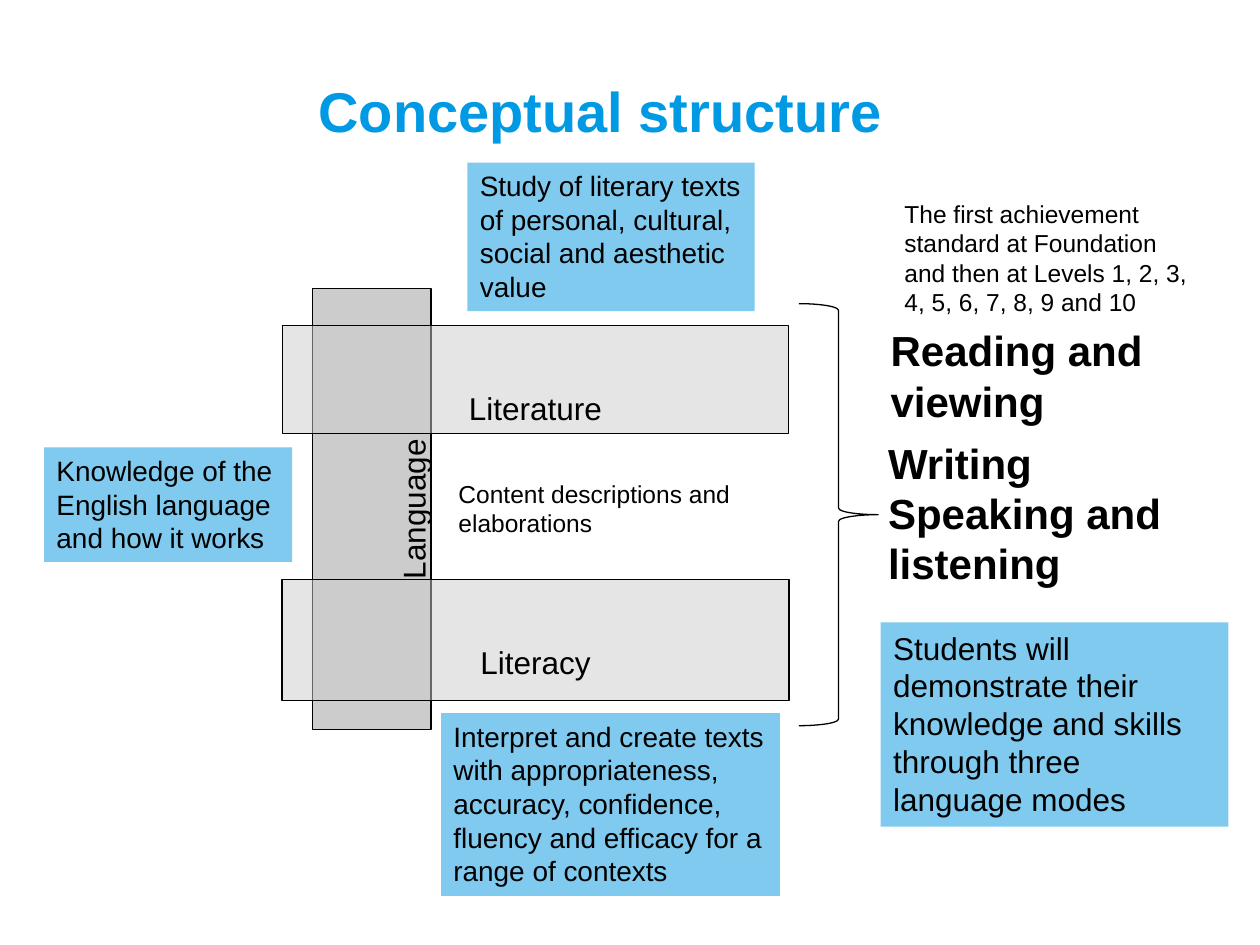
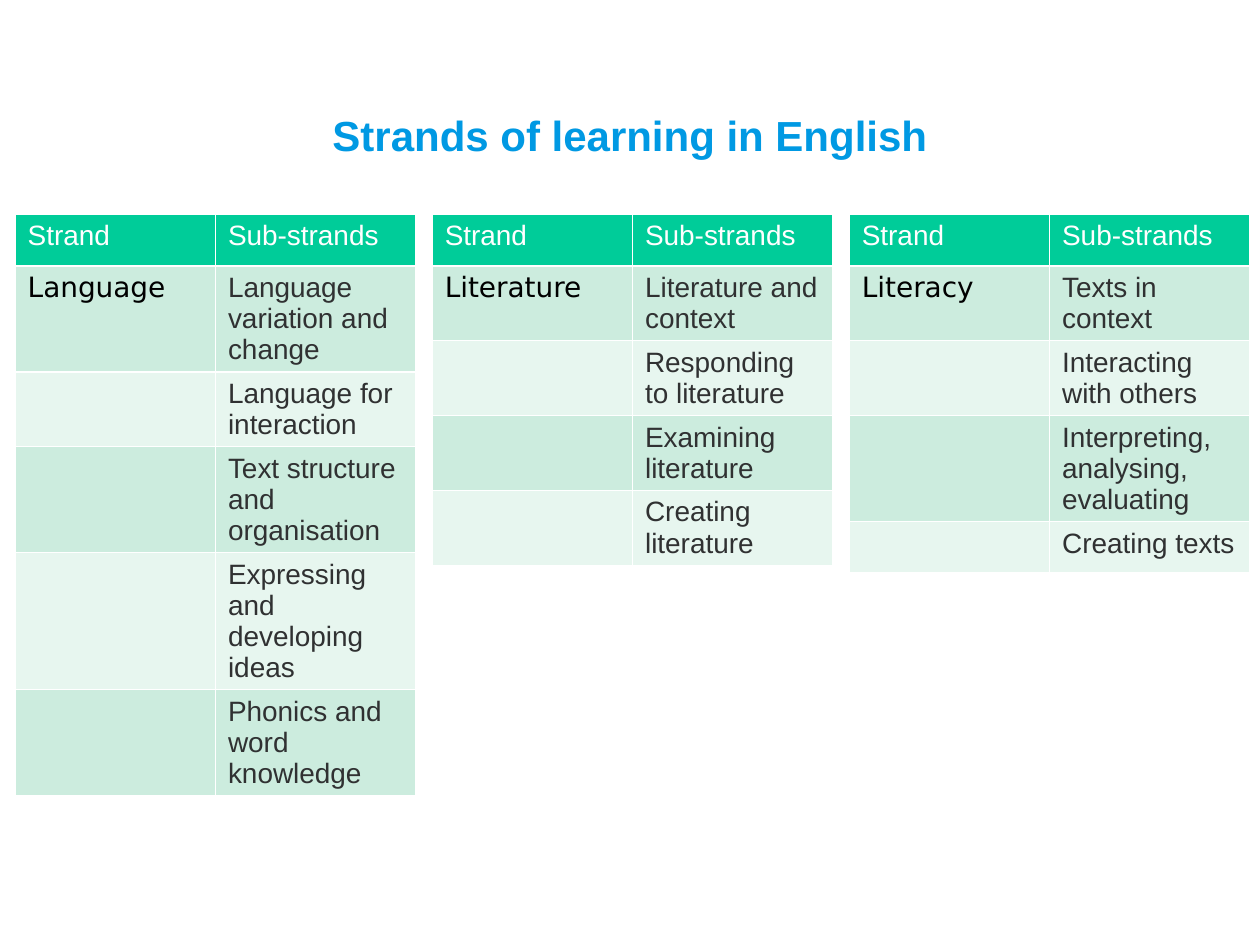
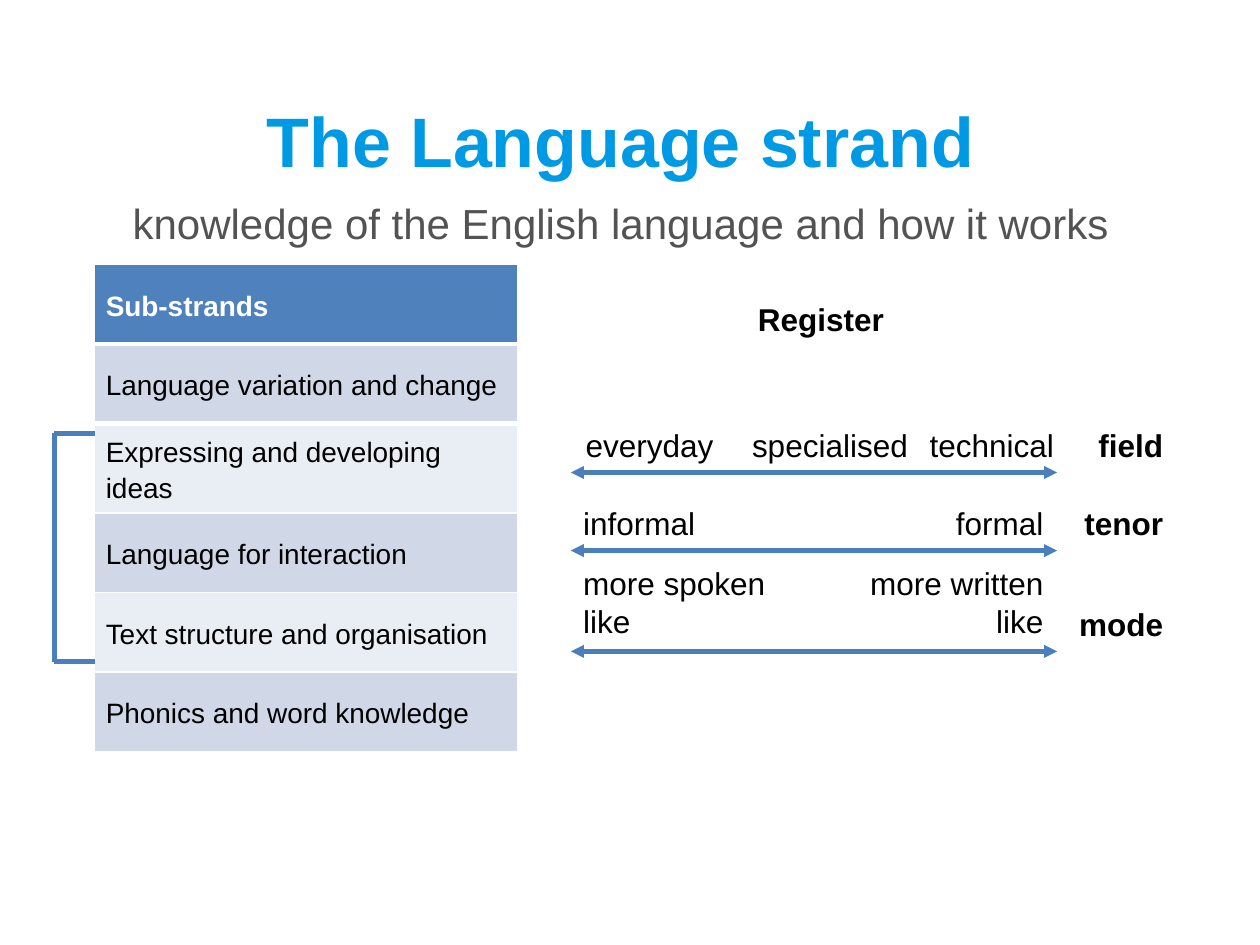
from lxml import etree
from pptx import Presentation
from pptx.dml.color import RGBColor
from pptx.enum.shapes import MSO_CONNECTOR, MSO_SHAPE
from pptx.enum.text import MSO_ANCHOR, PP_ALIGN
from pptx.oxml.ns import qn
from pptx.util import Inches, Pt

RECTANGLE, BRACE = MSO_SHAPE.RECTANGLE, MSO_SHAPE.RIGHT_BRACE
STRAIGHT = MSO_CONNECTOR.STRAIGHT
TOP, MIDDLE = MSO_ANCHOR.TOP, MSO_ANCHOR.MIDDLE
LEFT, CENTER, RIGHT = PP_ALIGN.LEFT, PP_ALIGN.CENTER, PP_ALIGN.RIGHT
FONT = "Arial"
STRAND_FONT = "DejaVu Sans"
TITLE_ONLY = 5
COLORS = {
    "title": "0099E3",
    "subtitle": "535353",
    "text": "000000",
    "white": "FFFFFF",
    "note": "0096DF",
    "band": "CCCCCC",
    "strand_header": "00CC99",
    "strand_odd": "CCECDE",
    "strand_even": "E7F6EF",
    "strand_text": "303132",
    "sub_header": "4F81BD",
    "sub_odd": "D0D8E8",
    "sub_even": "E9EDF4",
    "line": "4B7EBC",
}


def rgb(name):
    return RGBColor.from_string(COLORS[name])


def box_lengths(box):
    return [Inches(value) for value in box]


def style(paragraph, size, color="text", bold=False, align=LEFT, spacing=None, font=FONT):
    paragraph.alignment = align
    if spacing:
        paragraph.line_spacing = spacing
    paragraph.font.name = font
    paragraph.font.size = Pt(size)
    paragraph.font.bold = bold
    paragraph.font.color.rgb = rgb(color)


def write(frame, text, size, anchor=TOP, **look):
    frame.word_wrap = True
    frame.vertical_anchor = anchor
    frame.text = text
    for paragraph in frame.paragraphs:
        style(paragraph, size, **look)


def add_titled_slide(deck, text, size, box):
    slide = deck.slides.add_slide(deck.slide_layouts[TITLE_ONLY])
    title = slide.shapes.title
    title.left, title.top, title.width, title.height = box_lengths(box)
    write(title.text_frame, text, size, MIDDLE, color="title", bold=True, align=CENTER)
    return slide


def add_label(slide, box, text, size=18, **look):
    label = slide.shapes.add_textbox(*box_lengths(box))
    write(label.text_frame, text, size, **look)


def add_outline(slide, kind, box, line_width, fill=None, opacity=100):
    shape = slide.shapes.add_shape(kind, *box_lengths(box))
    shape.shadow.inherit = False
    if fill:
        shape.fill.solid()
        shape.fill.fore_color.rgb = rgb(fill)
    else:
        shape.fill.background()
    if opacity < 100:
        color = shape._element.spPr.find(qn("a:solidFill"))[0]
        etree.SubElement(color, qn("a:alpha"), val=str(opacity * 1000))
    if line_width:
        shape.line.color.rgb = rgb("text")
        shape.line.width = Pt(line_width)
    else:
        shape.line.fill.background()
    return shape


def add_note(slide, box, text, size=16):
    note = add_outline(slide, RECTANGLE, box, 0, "note", 50)
    write(note.text_frame, text, size)


def add_band(slide, box, text, line_width, opacity, spacing, anchor=TOP, rotation=0, upward=False):
    band = add_outline(slide, RECTANGLE, box, line_width, "band", opacity)
    band.rotation = rotation
    write(band.text_frame, text, 18, anchor, align=CENTER, spacing=spacing)
    if upward:
        band.text_frame._txBody.bodyPr.set("vert", "vert270")


def add_line(slide, start, end, width, arrows=False):
    line = slide.shapes.add_connector(STRAIGHT, *box_lengths(start + end))
    line.line.color.rgb = rgb("line")
    line.line.width = Pt(width)
    if arrows:
        outline = line.line._get_or_add_ln()
        for end_tag in ("a:headEnd", "a:tailEnd"):
            etree.SubElement(outline, qn(end_tag), type="triangle")
    etree.SubElement(line._element.spPr, qn("a:effectLst"))


def add_grid(slide, left, top, column_width, row_height, columns, rows):
    frame = slide.shapes.add_table(
        rows, columns,
        *box_lengths((left, top, column_width * columns, row_height * rows)))
    grid = frame.table
    for column in grid.columns:
        column.width = Inches(column_width)
    for row in grid.rows:
        row.height = Inches(row_height)
    return grid


def fill_rows(grid, palette):
    for index, row in enumerate(grid.rows):
        shade = "header" if index == 0 else "odd" if index % 2 else "even"
        for cell in row.cells:
            cell.fill.solid()
            cell.fill.fore_color.rgb = rgb(f"{palette}_{shade}")


def add_cell_edge(cell, side, width):
    edge = etree.Element(qn(side), w=str(Pt(width)))
    fill = etree.SubElement(edge, qn("a:solidFill"))
    etree.SubElement(fill, qn("a:srgbClr"), val=COLORS["white"])
    cell._tc.get_or_add_tcPr().insert(0, edge)


def add_strands(slide, left, top):
    def place(x, y, width, height):
        return left + x, top + y, width, height

    add_band(slide, place(0.24, 0, 0.94, 3.5), "Language", 1, 100, 3, upward=True)
    add_band(slide, place(1.53, 0.78, 0.96, 4.02), "Literacy", 1, 50, 2.5,
             rotation=90, upward=True)
    add_band(slide, place(0, 0.29, 4.02, 0.86), "Literature", 0.5, 50, 2.5, MIDDLE)
    add_note(slide, place(-1.89, 1.26, 1.97, 0.91),
             "Knowledge of the English language and how it works")
    add_note(slide, place(1.26, 3.37, 2.69, 1.45),
             "Interpret and create texts with appropriateness, accuracy, confidence, "
             "fluency and efficacy for a range of contexts")
    add_note(slide, place(1.47, -1, 2.28, 1.18),
             "Study of literary texts of personal, cultural, social and aesthetic value")
    add_label(slide, place(1.3, 1.46, 2.72, 0.57), "Content descriptions and elaborations", 14)


def add_modes(slide, left, top):
    def place(x, y, width, height):
        return left + x, top + y, width, height

    add_outline(slide, BRACE, place(0, 0.88, 0.63, 3.35), 0.75)
    add_label(slide, place(0.63, 1, 2.76, 0.91), "Reading and viewing", 24, bold=True)
    add_label(slide, place(0.61, 1.89, 2.91, 1.31), "Writing\nSpeaking and listening", 24, bold=True)
    add_label(slide, place(0.74, 0, 2.5, 1.04),
              "The first achievement standard at Foundation and then at "
              "Levels 1, 2, 3, 4, 5, 6, 7, 8, 9 and 10", 14)
    add_note(slide, place(0.65, 3.41, 2.76, 1.62),
             "Students will demonstrate their knowledge and skills through three language modes", 18)


def add_strand_table(slide, left, top, strand, sub_strands):
    grid = add_grid(slide, left, top, 1.59, 0.41, 2, len(sub_strands) + 1)
    fill_rows(grid, "strand")
    for column, heading in enumerate(("Strand", "Sub-strands")):
        write(grid.cell(0, column).text_frame, heading, 16, color="white")
    write(grid.cell(1, 0).text_frame, strand, 16, font=STRAND_FONT)
    for row, sub_strand in enumerate(sub_strands, 1):
        write(grid.cell(row, 1).text_frame, sub_strand, 16, color="strand_text")


def add_sub_strand_table(slide, left, top, sub_strands):
    grid = add_grid(slide, left, top, 3.36, 0.63, 1, len(sub_strands) + 1)
    fill_rows(grid, "sub")
    add_cell_edge(grid.cell(0, 0), "a:lnB", 3)
    add_cell_edge(grid.cell(1, 0), "a:lnT", 3)
    for row, text in enumerate(["Sub-strands"] + sub_strands):
        cell = grid.cell(row, 0)
        cell.vertical_anchor = MIDDLE
        cell.margin_left = cell.margin_right = Inches(0.09)
        cell.margin_top = cell.margin_bottom = Inches(0.05)
        paragraph = cell.text_frame.paragraphs[0]
        paragraph.text = text
        paragraph.space_after = Pt(10)
        style(paragraph, 16, "text" if row else "white", bold=row == 0, spacing=1.15)


def add_bracket(slide, left, top, width, height):
    bottom = top + height
    add_line(slide, (left, top), (left, bottom), 3)
    for y in (top, bottom):
        add_line(slide, (left, y), (left + width, y), 3)


def add_register(slide, left, top):
    add_label(slide, (left + 0.56, top, 2.85, 0.4), "Register", bold=True, align=CENTER)
    scales = [
        ("field", 1.42, 0.42, [("everyday", 0.02, 1.65, LEFT), ("specialised", 1.34, 1.65, LEFT),
                               ("technical", 2.75, 1.65, LEFT)]),
        ("tenor", 2.04, 0.42, [("informal", 0, 1.1, LEFT), ("formal", 2.75, 1.1, RIGHT)]),
        ("mode", 2.84, 0.74, [("more spoken like", 0, 1.65, LEFT),
                              ("more written like", 2.2, 1.65, RIGHT)]),
    ]
    for name, arrow_y, rise, degrees in scales:
        y = top + arrow_y
        for degree, x, width, align in degrees:
            add_label(slide, (left + x, y - rise, width, rise - 0.02), degree, align=align)
        add_label(slide, (left + 3.7, y - 0.42, 1.1, 0.4), name, bold=True, align=RIGHT)
        add_line(slide, (left, y), (left + 3.86, y), 2.5, arrows=True)


def build_structure_slide(deck):
    slide = add_titled_slide(deck, "Conceptual structure", 32, (0.35, 0.6, 8.83, 0.55))
    add_strands(slide, 2.24, 2.29)
    add_modes(slide, 6.34, 1.53)


def build_strands_slide(deck):
    slide = add_titled_slide(deck, "Strands of learning in English", 24, (0.75, 0.44, 8.5, 1.25))
    strands = {
        "Language": ["Language variation and change", "Language for interaction",
                     "Text structure and organisation", "Expressing and developing ideas",
                     "Phonics and word knowledge"],
        "Literature": ["Literature and context", "Responding to literature",
                       "Examining literature", "Creating literature"],
        "Literacy": ["Texts in context", "Interacting with others",
                     "Interpreting, analysing, evaluating", "Creating texts"],
    }
    for index, (strand, sub_strands) in enumerate(strands.items()):
        add_strand_table(slide, 0.12 + index * 3.31, 1.7, strand, sub_strands)


def build_language_slide(deck):
    slide = add_titled_slide(deck, "The Language strand ", 40, (0.75, 0.67, 8.5, 0.88))
    add_label(slide, (0.75, 1.52, 8.35, 0.5), "knowledge of the English language and how it works",
              24, color="subtitle", align=CENTER)
    add_sub_strand_table(slide, 0.75, 2.1, [
        "Language variation and change", "Expressing and developing ideas",
        "Language for interaction", "Text structure and organisation",
        "Phonics and word knowledge"])
    add_bracket(slide, 0.43, 3.44, 0.32, 1.81)
    add_register(slide, 4.53, 2.33)


def main():
    deck = Presentation()
    deck.slide_width, deck.slide_height = Inches(10), Inches(7.5)
    build_structure_slide(deck)
    build_strands_slide(deck)
    build_language_slide(deck)
    deck.save("out.pptx")


if __name__ == "__main__":
    main()
